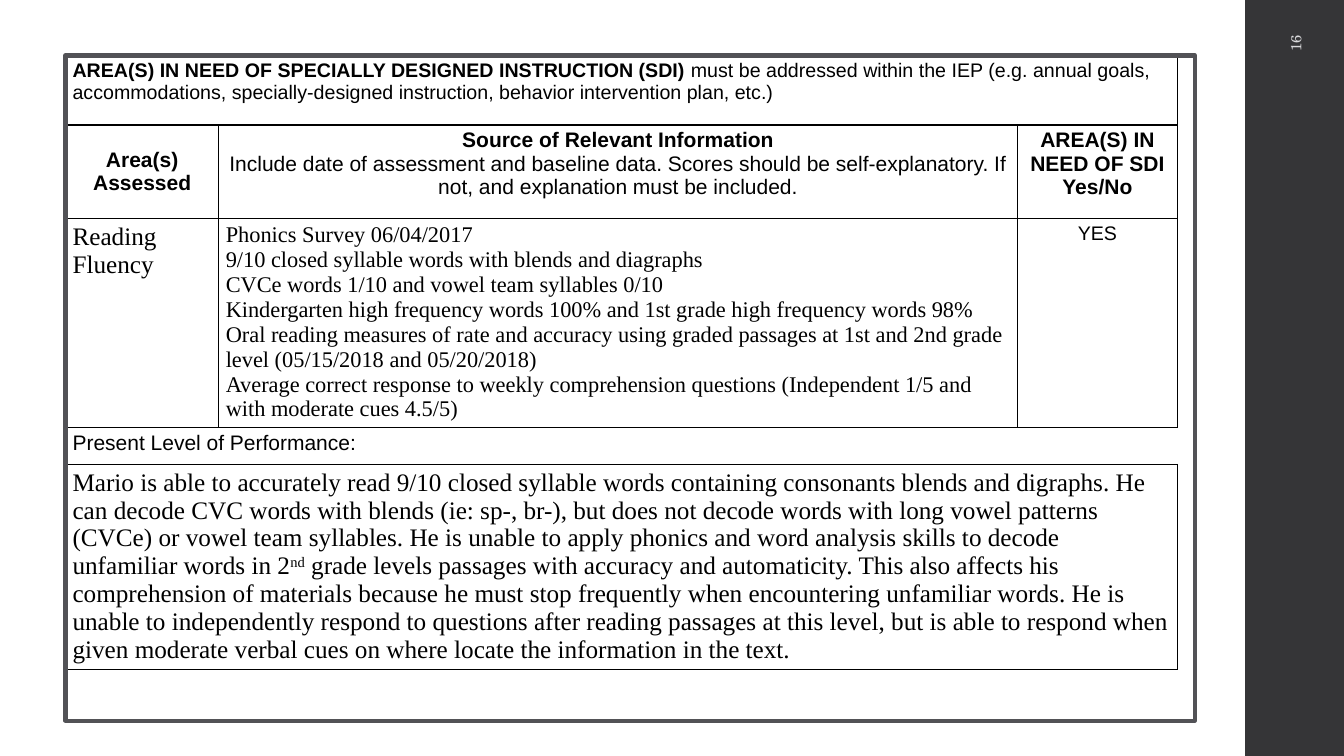
from lxml.etree import SubElement
from pptx import Presentation
from pptx.dml.color import RGBColor
from pptx.enum.shapes import MSO_SHAPE as Shape
from pptx.enum.text import MSO_ANCHOR as Anchor, PP_ALIGN as Align
from pptx.oxml.ns import qn
from pptx.util import Inches, Pt

COLORS = {"text": "000000", "border": "000000", "sidebar": "353537",
          "frame": "525256", "number": "D9D9DB"}
SANS, SERIF, NUMBER_FONT = "Arial", "Times New Roman", "TeX Gyre Schola"

# Slide and table grid, in inches
WIDTH, HEIGHT = 13.33, 7.5
LEFT, TOP = 0.65, 0.55
COLS = [1.52, 7.92, 1.59]
ROWS = [0.69, 0.93, 2.07, 0.37, 2.03]
FULL_ROWS = (0, 3, 4)
OPEN_ROW = 3  # has no side borders

SURVEY = [
    "Phonics Survey 06/04/2017",
    "9/10 closed syllable words with blends and diagraphs",
    "CVCe words 1/10 and vowel team syllables 0/10",
    "Kindergarten high frequency words 100% and 1st grade high frequency words 98%",
    "Oral reading measures of rate and accuracy using graded passages at 1st and 2nd grade "
    "level (05/15/2018 and 05/20/2018)",
    "Average correct response to weekly comprehension questions (Independent 1/5 and "
    "with moderate cues 4.5/5)",
]
PERFORMANCE = [
    "Mario is able to accurately read 9/10 closed syllable words containing consonants blends "
    "and digraphs. He can decode CVC words with blends (ie: sp-, br-), but does not decode words "
    "with long vowel patterns (CVCe) or vowel team syllables. He is unable to apply phonics and "
    "word analysis skills to decode unfamiliar words in 2",
    "nd",
    " grade levels passages with accuracy and automaticity. This also affects his comprehension "
    "of materials because he must stop frequently when encountering unfamiliar words. He is "
    "unable to independently respond to questions after reading passages at this level, but is "
    "able to respond when given moderate verbal cues on where locate the information in the text.",
]


def rgb(name):
    return RGBColor.from_string(COLORS[name])


def style(p, size, font, color="text", align=Align.LEFT, bold=False):
    p.alignment = align
    p.font.size, p.font.name, p.font.bold = Pt(size), font, bold
    p.font.color.rgb = rgb(color)


def write(cell, paragraphs, size, font=SANS, align=Align.LEFT, bold=False):
    """Fill a cell; a paragraph is a string or a list of run strings."""
    tf = cell.text_frame
    for i, runs in enumerate(paragraphs):
        p = tf.paragraphs[0] if i == 0 else tf.add_paragraph()
        for text in [runs] if isinstance(runs, str) else runs:
            p.add_run().text = text
        style(p, size, font, align=align, bold=bold)
    return tf.paragraphs


def set_borders(cell, visible):
    tc_pr = cell._tc.get_or_add_tcPr()
    for side in "LRTB":
        ln = SubElement(tc_pr, qn(f"a:ln{side}"), w=str(Pt(1)))
        if side in visible:
            fill = SubElement(ln, qn("a:solidFill"))
            SubElement(fill, qn("a:srgbClr"), val=COLORS["border"])
        else:
            SubElement(ln, qn("a:noFill"))


def add_rect(slide, x, y, w, h, fill=None, line=None):
    sp = slide.shapes.add_shape(Shape.RECTANGLE, Inches(x), Inches(y), Inches(w), Inches(h))
    sp.shadow.inherit = False
    if fill:
        sp.fill.solid()
        sp.fill.fore_color.rgb = rgb(fill)
    else:
        sp.fill.background()
    if line:
        sp.line.color.rgb, sp.line.width = rgb(line), Pt(3)
    else:
        sp.line.fill.background()


def add_grid(slide):
    table = slide.shapes.add_table(len(ROWS), len(COLS), Inches(LEFT), Inches(TOP),
                                   Inches(sum(COLS)), Inches(sum(ROWS))).table
    table.first_row = table.horz_banding = False
    for col, w in zip(table.columns, COLS):
        col.width = Inches(w)
    for i, (row, h) in enumerate(zip(table.rows, ROWS)):
        row.height = Inches(h)
        for cell in row.cells:
            cell.margin_left = cell.margin_right = Inches(0.07)
            cell.margin_top = cell.margin_bottom = Inches(0.04)
            set_borders(cell, "TB" if i == OPEN_ROW else "LRTB")
            cell.fill.background()
    for i in FULL_ROWS:
        table.cell(i, 0).merge(table.cell(i, len(COLS) - 1))
    return table


def fill_grid(table):
    # Heading
    heading = write(table.cell(0, 0), [[
        "AREA(S) IN NEED OF SPECIALLY DESIGNED INSTRUCTION (SDI) ",
        "must be addressed within the IEP (e.g. annual goals, accommodations, "
        "specially-designed instruction, behavior intervention plan, etc.)"]], 14)
    heading[0].runs[0].font.bold = True

    # Column headings
    write(table.cell(1, 0), ["Area(s) Assessed"], 15, align=Align.CENTER, bold=True)
    table.cell(1, 0).vertical_anchor = Anchor.MIDDLE
    source = write(table.cell(1, 1), [
        "Source of Relevant Information",
        "Include date of assessment and baseline data. Scores should be self-explanatory. "
        "If not, and explanation must be included."], 15, align=Align.CENTER)
    source[0].font.bold = True
    write(table.cell(1, 2), ["AREA(S) IN NEED OF SDI Yes/No"], 15,
          align=Align.CENTER, bold=True)

    # Assessed area
    write(table.cell(2, 0), ["Reading Fluency"], 18, SERIF)
    write(table.cell(2, 1), SURVEY, 16, SERIF)
    write(table.cell(2, 2), ["YES"], 14, align=Align.CENTER)

    # Present level
    write(table.cell(3, 0), ["Present Level of Performance:"], 15)
    level = write(table.cell(4, 0), [PERFORMANCE], 18, SERIF)
    level[0].runs[1].font._element.set("baseline", "30000")


def add_page_number(slide, text):
    box = slide.shapes.add_textbox(Inches(11.81), Inches(1.09), Inches(2.08), Inches(0.4))
    box.rotation = 270
    tf = box.text_frame
    tf.word_wrap = True
    tf.vertical_anchor = Anchor.MIDDLE
    p = tf.paragraphs[0]
    p.add_run().text = text
    style(p, 10.5, NUMBER_FONT, "number", Align.RIGHT)


def main():
    prs = Presentation()
    prs.slide_width, prs.slide_height = Inches(WIDTH), Inches(HEIGHT)
    slide = prs.slides.add_slide(prs.slide_layouts[6])
    add_rect(slide, 12.35, 0, WIDTH - 12.35, HEIGHT, fill="sidebar")
    fill_grid(add_grid(slide))
    add_page_number(slide, "16")
    add_rect(slide, LEFT, TOP, 11.2, 6.6, line="frame")
    prs.save("out.pptx")


if __name__ == "__main__":
    main()
